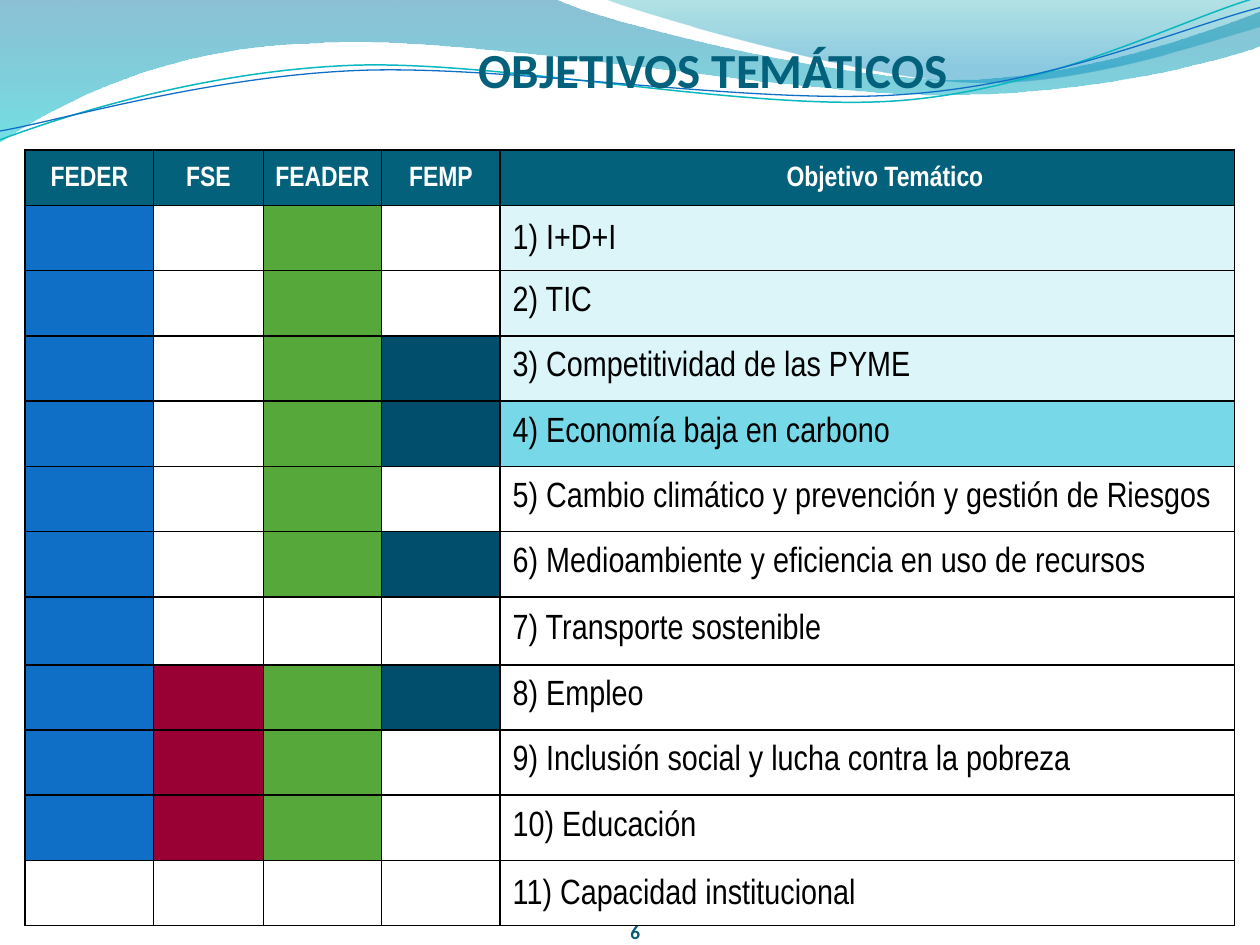
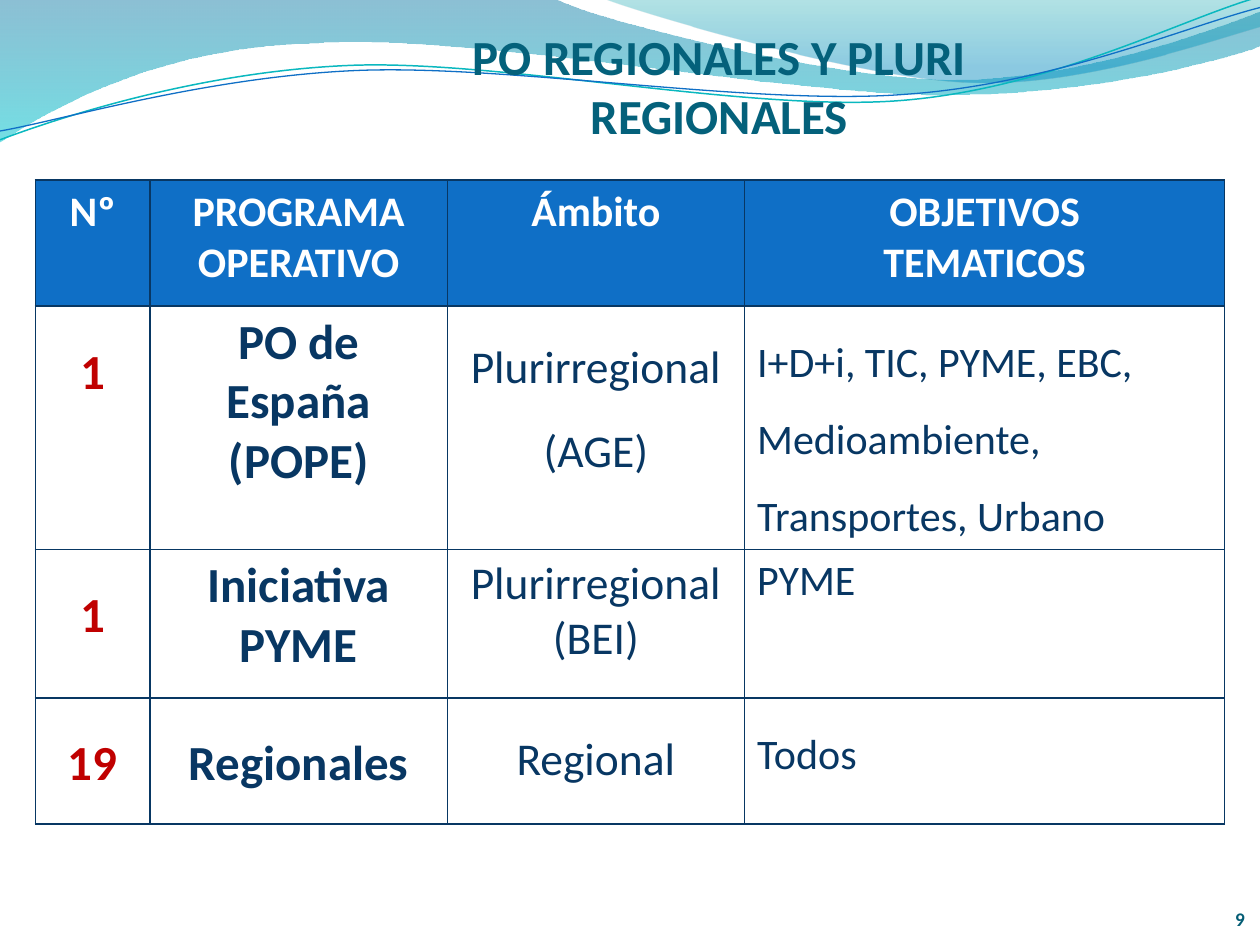
from lxml import etree
from pptx import Presentation
from pptx.dml.color import RGBColor
from pptx.enum.text import MSO_ANCHOR, PP_ALIGN
from pptx.oxml.ns import qn
from pptx.util import Inches, Pt

LEFT, MID, RIGHT = PP_ALIGN.LEFT, PP_ALIGN.CENTER, PP_ALIGN.RIGHT
TOP, CENTRE, LOW = MSO_ANCHOR.TOP, MSO_ANCHOR.MIDDLE, MSO_ANCHOR.BOTTOM

WHITE = RGBColor(0xFF, 0xFF, 0xFF)
BLACK = RGBColor(0x00, 0x00, 0x00)
TEAL = RGBColor(0x04, 0x61, 0x7B)
PAGE = RGBColor(0x04, 0x5D, 0x75)
BLUE = RGBColor(0x0F, 0x6F, 0xC6)
CYAN = RGBColor(0x0A, 0xB8, 0xBF)
GREEN = RGBColor(0x55, 0xA8, 0x39)
WINE = RGBColor(0x99, 0x00, 0x33)
SEA = RGBColor(0x00, 0x4E, 0x6C)
PALE = RGBColor(0xDB, 0xF5, 0xF9)
AQUA = RGBColor(0x77, 0xD9, 0xE8)
NAVY = RGBColor(0x08, 0x37, 0x63)
RED = RGBColor(0xC0, 0x00, 0x00)

# Each route: a start, then points (2 numbers) or curves (6 numbers)
WAVES = [
    ([(0, 0), (4.4, -0.01), (4.76, 0.17, 6.64, 0.63, 7.58, 0.63),
      (8.53, 0.63, 9.58, 0.26, 10, 0.09), (10.01, 0.36),
      (9.83, 0.44, 8.7, 0.76, 7.46, 0.75),
      (6.22, 0.75, 3.82, 0.28, 2.57, 0.34),
      (1.29, 0.36, 0.46, 0.83, -0.01, 1.13), (0, 0)],
     [(0, RGBColor(0x00, 0x74, 0xA1), 45), (1, RGBColor(0x00, 0xC6, 0xCF), 55)]),
    ([(4.79, -0.01), (5.09, 0.11, 6.82, 0.62, 7.69, 0.65),
      (8.56, 0.69, 9.61, 0.32, 10, 0.21), (10, 0), (4.79, -0.01)],
     [(0, RGBColor(0x00, 0xA1, 0xA9), 30), (0.8, RGBColor(0x00, 0x8B, 0xBF), 45)]),
]
CURVES = [
    ([(0, 1.11), (0.48, 0.93, 1.58, 0.57, 2.77, 0.52),
      (3.95, 0.47, 5.93, 0.89, 7.13, 0.8),
      (8.33, 0.71, 9.38, 0.15, 9.98, -0.02)], CYAN, 0.85),
    ([(0, 1.04), (0.47, 0.96, 1.64, 0.61, 2.83, 0.56),
      (4.03, 0.51, 5.97, 0.84, 7.17, 0.75),
      (8.36, 0.67, 9.41, 0.21, 10, 0.06)], BLUE, 0.75),
]

# Funds that support each goal: R = FEDER, S = FSE, A = FEADER, M = FEMP
FUNDS = {"R": BLUE, "S": WINE, "A": GREEN, "M": SEA}
HEADS = ["FEDER", "FSE", "FEADER", "FEMP", "Objetivo Temático"]
GOALS = [
    ("I+D+I", "RA", PALE),
    ("TIC", "RA", PALE),
    ("Competitividad de las PYME", "RAM", PALE),
    ("Economía baja en carbono", "RAM", AQUA),
    ("Cambio climático y prevención y gestión de Riesgos", "RA", WHITE),
    ("Medioambiente y eficiencia en uso de recursos", "RAM", WHITE),
    ("Transporte sostenible", "R", WHITE),
    ("Empleo", "RSAM", WHITE),
    ("Inclusión social y lucha contra la pobreza", "RSA", WHITE),
    ("Educación", "RSA", WHITE),
    ("Capacidad institucional", "", WHITE),
]

# Programmes: texts, then the line spacing of each column
PLANS = [
    (["1", "PO de España (POPE)", "Plurirregional\n(AGE)",
      "I+D+i, TIC, PYME, EBC, Medioambiente, Transportes, Urbano"],
     [1.5, 1, 1.5, 1.5]),
    (["1", "Iniciativa PYME", "Plurirregional\n(BEI)", "PYME"], [1.5, 1, 1, 1]),
    (["19", "Regionales", "Regional", "Todos"], [1.5] * 4),
]


def font(size, color, bold=True, name="Calibri"):
    return {"size": Pt(size), "bold": bold, "name": name, "color": color}


PLAN_FONTS = [(font(28, RED), MID), (font(28, NAVY), MID),
              (font(26, NAVY, False), MID), (font(24, NAVY, False), LEFT)]


def write(frame, text, look, align=MID, gap=1):
    for i, line in enumerate(text.split("\n")):
        para = frame.paragraphs[0] if i == 0 else frame.add_paragraph()
        para.alignment, para.line_spacing = align, gap
        run = para.add_run()
        run.text = line
        for key, value in look.items():
            if key == "color":
                run.font.color.rgb = value
            else:
                setattr(run.font, key, value)


def label(slide, box, text, look, align=MID, anchor=CENTRE):
    frame = slide.shapes.add_textbox(*map(Inches, box)).text_frame
    pads = {"margin_" + side: 0 for side in ("left", "top", "right", "bottom")}
    for key, value in {**pads, "word_wrap": True, "vertical_anchor": anchor}.items():
        setattr(frame, key, value)
    write(frame, text, look, align)


def outline(slide, route, close):
    """Draw straight parts, then bend those that have control points."""
    start, *parts = route
    pen = slide.shapes.build_freeform(*map(Inches, start))
    pen.add_line_segments([tuple(map(Inches, part[-2:])) for part in parts], close)
    shape = pen.convert_to_shape()
    shape.shadow.inherit = False
    for part, line in zip(parts, list(shape._element.iter(qn("a:lnTo")))):
        if len(part) == 6:
            bend = etree.Element(qn("a:cubicBezTo"))
            for x, y in zip(part[::2], part[1::2]):
                etree.SubElement(bend, qn("a:pt"), x=str(Inches(x) - shape.left),
                                 y=str(Inches(y) - shape.top))
            line.getparent().replace(line, bend)
    return shape


def bands(slide):
    for route, stops in WAVES:
        wave = outline(slide, route, True)
        wave.line.fill.background()
        wave.fill.gradient()
        wave.fill.gradient_angle = 270
        for stop, (place, color, _) in zip(wave.fill.gradient_stops, stops):
            stop.position, stop.color.rgb = place, color
        tints = wave._element.spPr.iter(qn("a:srgbClr"))
        for tint, (_, _, alpha) in zip(tints, stops):
            etree.SubElement(tint, qn("a:alpha"), val=str(alpha * 1000))
    for route, color, width in CURVES:
        curve = outline(slide, route, False)
        curve.fill.background()
        curve.line.color.rgb, curve.line.width = color, Pt(width)


def grid(slide, left, top, cols, rows):
    box = map(Inches, (left, top, sum(cols), sum(rows)))
    table = slide.shapes.add_table(len(rows), len(cols), *box).table
    table.first_row = table.horz_banding = False
    for col, width in zip(table.columns, cols):
        col.width = Inches(width)
    for row, height in zip(table.rows, rows):
        row.height = Inches(height)
    return table


def paint(cell, edge, fill=None, anchor=TOP, **pads):
    cell.vertical_anchor = anchor
    for side, pad in pads.items():
        setattr(cell, "margin_" + side, Inches(pad))
    if fill is None:
        cell.fill.background()
    else:
        cell.fill.solid()
        cell.fill.fore_color.rgb = fill
    # Borders come before the fill
    for i, side in enumerate("LRTB"):
        line = etree.Element(qn("a:ln" + side), w=str(Pt(1)))
        solid = etree.SubElement(line, qn("a:solidFill"))
        etree.SubElement(solid, qn("a:srgbClr"), val=str(edge))
        cell._tc.get_or_add_tcPr().insert(i, line)


def page(deck):
    slide = deck.slides.add_slide(deck.slide_layouts[6])
    bands(slide)
    return slide


def caption(slide, title, box, number, spot):
    label(slide, box, title, font(28, TEAL))
    label(slide, (*spot, 0.47, 0.32), number, font(11, PAGE), RIGHT, LOW)


def goals(slide):
    step = (6.16 - 0.44 - 0.54) / 10
    heights = [0.44] + [step] * 6 + [0.54] + [step] * 4
    table = grid(slide, 0.2, 1.19, [1.02, 0.87, 0.94, 0.94, 5.83], heights)
    pads = {"top": 0, "right": 0, "bottom": 0}
    head = font(16, WHITE, name="Arial Narrow")
    body = font(20, BLACK, False, "Arial Narrow")
    for i, text in enumerate(HEADS):
        cell = table.cell(0, i)
        paint(cell, BLACK, TEAL, CENTRE, left=0.28 if i == 4 else 0, **pads)
        write(cell.text_frame, text, head, MID, 1.15)
    for n, (text, funds, tint) in enumerate(GOALS, 1):
        for i, (key, color) in enumerate(FUNDS.items()):
            paint(table.cell(n, i), BLACK, color if key in funds else None)
        cell = table.cell(n, 4)
        paint(cell, BLACK, tint, CENTRE, left=0.1, **pads)
        gap = 1.15 if n in (1, len(GOALS)) else Pt(18)
        write(cell.text_frame, f"{n}) {text}", body, LEFT, gap)


def plans(slide):
    table = grid(slide, 0.28, 1.43, [0.91, 2.36, 2.36, 3.81], [1, 1.93, 1.18, 1])
    heads = ["Nº", "PROGRAMA OPERATIVO", "Ámbito", "OBJETIVOS\nTEMATICOS"]
    for i, text in enumerate(heads):
        paint(table.cell(0, i), NAVY, BLUE)
        write(table.cell(0, i).text_frame, text, font(24, WHITE))
    for n, (texts, gaps) in enumerate(PLANS, 1):
        for i, (text, gap, (look, align)) in enumerate(zip(texts, gaps, PLAN_FONTS)):
            paint(table.cell(n, i), NAVY)
            write(table.cell(n, i).text_frame, text, look, align, gap)


def main():
    deck = Presentation()
    deck.slide_width, deck.slide_height = Inches(10), Inches(7.5)
    # Thematic goals
    slide = page(deck)
    goals(slide)
    caption(slide, "OBJETIVOS TEMÁTICOS", (2.7, 0.25, 5.92, 0.59), "6", (4.61, 7.17))
    # Regional programmes
    slide = page(deck)
    caption(slide, "PO REGIONALES Y PLURI REGIONALES", (3.11, 0.25, 5.2, 0.85),
            "9", (9.41, 7.06))
    plans(slide)
    deck.save("out.pptx")


if __name__ == "__main__":
    main()
